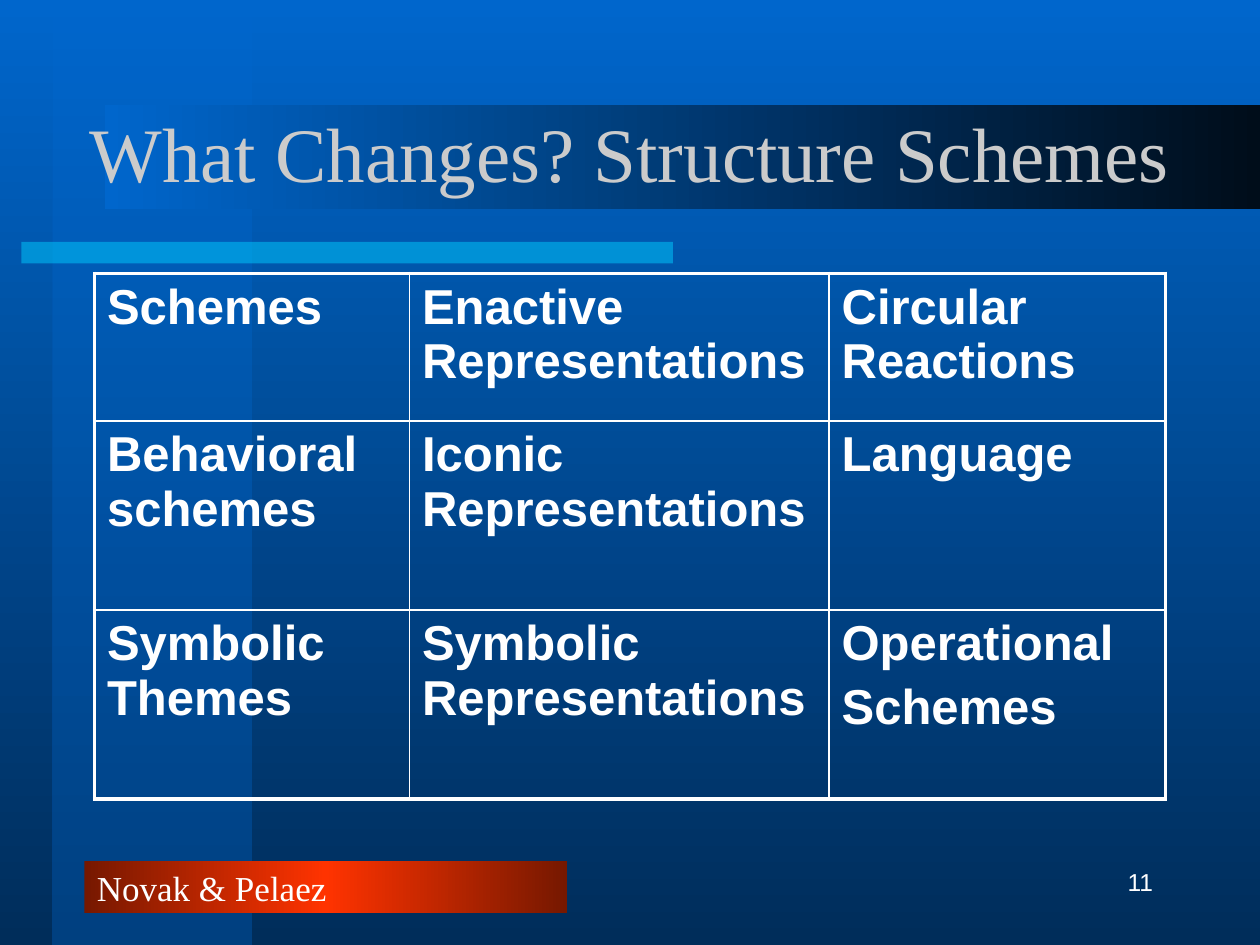
from lxml.etree import SubElement
from pptx import Presentation
from pptx.dml.color import RGBColor
from pptx.enum.shapes import MSO_SHAPE
from pptx.enum.text import MSO_ANCHOR, PP_ALIGN
from pptx.oxml.ns import qn
from pptx.util import Inches, Pt

TITLE = "What Changes? Structure Schemes"
FOOTER = "Novak & Pelaez"
PAGE_NUMBER = "11"
ROWS = [
    ["Schemes", "Enactive Representations", "Circular Reactions"],
    ["Behavioral schemes", "Iconic Representations", "Language"],
    ["Symbolic Themes", "Symbolic Representations", "Operational\nSchemes"],
]
COLUMN_WIDTHS = [2.5, 3.33, 2.67]
ROW_HEIGHTS = [1.17, 1.5, 1.5]
OUTER_BORDER, INNER_BORDER = 2.25, 1

WHITE = RGBColor(0xFF, 0xFF, 0xFF)
TITLE_GRAY = RGBColor(0xCB, 0xCB, 0xCB)
BLUE = RGBColor(0x00, 0x66, 0xCC)
MID_BLUE = RGBColor(0x00, 0x53, 0xA6)
DEEP_BLUE = RGBColor(0x00, 0x2D, 0x5A)
NEAR_BLACK = RGBColor(0x00, 0x0D, 0x1A)
CYAN = RGBColor(0x00, 0xCC, 0xFF)
RED = RGBColor(0xFF, 0x33, 0x00)
DARK_RED = RGBColor(0x76, 0x18, 0x00)
SERIF, SANS = "Times New Roman", "Arial"
RIGHTWARD, DOWNWARD = 0, 270


def add_color(parent, color, alpha=100):
    element = SubElement(parent, qn("a:srgbClr"), val=str(color))
    if alpha < 100:
        SubElement(element, qn("a:alpha"), val=str(alpha * 1000))


def set_gradient(fill, owner, colors, angle, alpha=100):
    """Spread the colors evenly over a linear gradient of the owner's fill."""
    fill.gradient()
    fill.gradient_angle = angle
    stops = owner.element.find(f".//{qn('a:gsLst')}")
    for stop in list(stops):
        stops.remove(stop)
    for index, color in enumerate(colors):
        position = index * 100000 // (len(colors) - 1)
        add_color(SubElement(stops, qn("a:gs"), pos=str(position)), color, alpha)


def add_bar(slide, left, top, width, height):
    bar = slide.shapes.add_shape(MSO_SHAPE.RECTANGLE, Inches(left), Inches(top),
                                 Inches(width), Inches(height))
    bar.shadow.inherit = False
    bar.line.fill.background()
    return bar


def write(frame, text, font_name, size, color, alignment, bold=False):
    frame.text = text
    for paragraph in frame.paragraphs:
        paragraph.alignment = alignment
        font = paragraph.font
        font.name, font.size, font.bold = font_name, Pt(size), bold
        font.color.rgb = color


def set_borders(cell, widths):
    properties = cell._tc.get_or_add_tcPr()
    for side, width in zip("LRTB", widths):
        line = SubElement(properties, qn(f"a:ln{side}"), w=str(Pt(width)))
        add_color(SubElement(line, qn("a:solidFill")), WHITE)


def add_scheme_table(slide):
    row_count, column_count = len(ROWS), len(COLUMN_WIDTHS)
    table = slide.shapes.add_table(
        row_count, column_count, Inches(0.75), Inches(2.17),
        Inches(sum(COLUMN_WIDTHS)), Inches(sum(ROW_HEIGHTS))).table
    table.first_row = table.horz_banding = False
    for column, width in zip(table.columns, COLUMN_WIDTHS):
        column.width = Inches(width)
    for row, height in zip(table.rows, ROW_HEIGHTS):
        row.height = Inches(height)
    for r, texts in enumerate(ROWS):
        for c, text in enumerate(texts):
            cell = table.cell(r, c)
            write(cell.text_frame, text, SANS, 28, WHITE, PP_ALIGN.LEFT, bold=True)
            for paragraph in cell.text_frame.paragraphs:
                paragraph.space_before = Pt(5.6)
            on_edge = [c == 0, c == column_count - 1, r == 0, r == row_count - 1]
            set_borders(cell, [OUTER_BORDER if edge else INNER_BORDER
                               for edge in on_edge])
            cell.fill.background()


def main():
    presentation = Presentation()
    presentation.slide_width, presentation.slide_height = Inches(10), Inches(7.5)
    slide = presentation.slides.add_slide(presentation.slide_layouts[5])
    set_gradient(slide.background.fill, slide, [BLUE, DEEP_BLUE], DOWNWARD)

    side_band = add_bar(slide, 0.42, 0, 1.58, 7.5)
    set_gradient(side_band.fill, side_band, [BLUE, MID_BLUE], DOWNWARD, alpha=50)

    accent_bar = add_bar(slide, 0.17, 1.92, 5.17, 0.17)
    accent_bar.fill.solid()
    accent_bar.fill.fore_color.rgb = CYAN
    accent_color = accent_bar.element.find(f".//{qn('a:srgbClr')}")
    SubElement(accent_color, qn("a:alpha"), val="50000")

    footer = add_bar(slide, 0.67, 6.83, 3.83, 0.42)
    set_gradient(footer.fill, footer, [DARK_RED, RED, DARK_RED], RIGHTWARD)
    write(footer.text_frame, FOOTER, SERIF, 20, WHITE, PP_ALIGN.LEFT)

    title_band = add_bar(slide, 0.83, 0.83, 9.17, 0.83)
    set_gradient(title_band.fill, title_band, [BLUE, NEAR_BLACK], RIGHTWARD)

    number = slide.shapes.add_textbox(Inches(7.17), Inches(6.75),
                                      Inches(2.08), Inches(0.5)).text_frame
    number.word_wrap = True
    number.vertical_anchor = MSO_ANCHOR.MIDDLE
    write(number, PAGE_NUMBER, SANS, 14, WHITE, PP_ALIGN.RIGHT)

    title = slide.shapes.title
    title.left, title.top = Inches(0), Inches(0.58)
    title.width, title.height = Inches(10), Inches(1.25)
    title.text_frame.vertical_anchor = MSO_ANCHOR.MIDDLE
    write(title.text_frame, TITLE, SERIF, 44, TITLE_GRAY, PP_ALIGN.CENTER)
    # The title placeholder starts at the back; bring it in front of its band.
    slide.shapes._spTree.append(title.element)

    add_scheme_table(slide)
    presentation.save("out.pptx")


if __name__ == "__main__":
    main()
